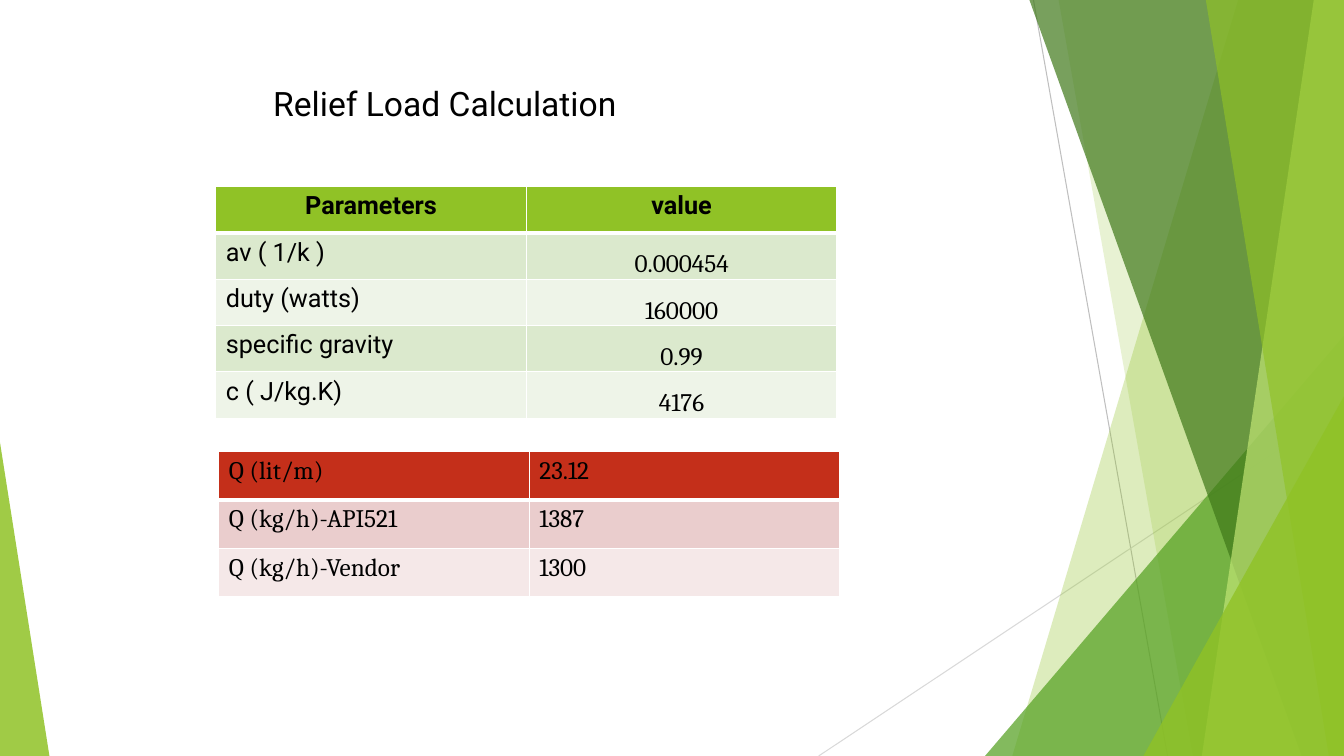
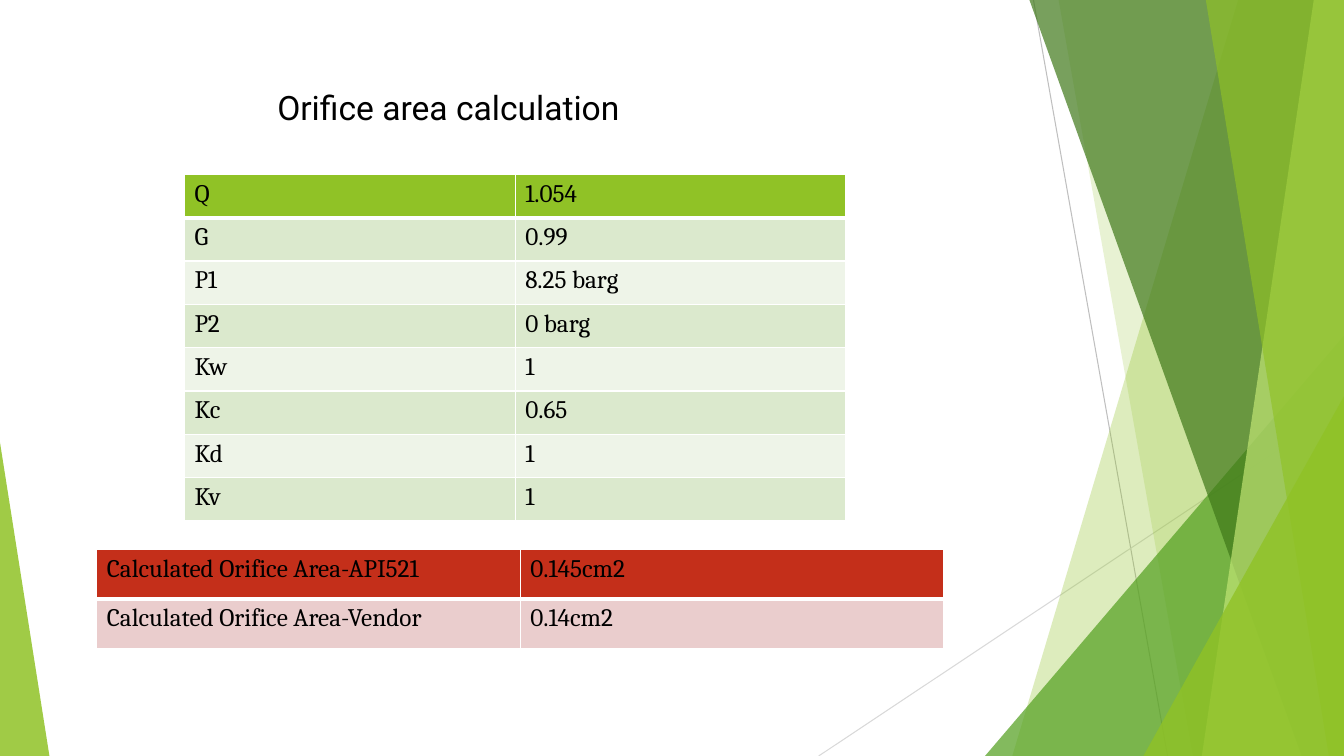
import pptx
import pptx.util
import pptx.dml.color
import pptx.enum.shapes
import pptx.enum.text
import pptx.oxml
import pptx.oxml.ns
from lxml import etree

Inches, Pt = pptx.util.Inches, pptx.util.Pt
qn = pptx.oxml.ns.qn
PP_ALIGN = pptx.enum.text.PP_ALIGN
ANCHOR = pptx.enum.text.MSO_ANCHOR

W, H = 13.33, 7.5
SANS, SERIF = "Roboto", "Cambria"
COLORS = {
    "black": "000000", "white": "FFFFFF",
    "lime": "90C226", "green": "54A021", "forest": "3F7819", "pale": "C0E474",
    "gray": "BFBFBF", "light gray": "D9D9D9",
}
# Header fill, then the two alternating body fills
SCHEMES = {
    "green": ("90C226", "DBE9CD", "EEF4E8"),
    "red": ("C42F1A", "EACDCD", "F5E8E8"),
}

# Thin lines: start, end, colour
LINES = [
    ((10.25, 0), (11.58, H), "gray"),
    ((W, 4.03), (8.12, H), "light gray"),
]
# Facets from back to front. A band runs to the right edge and gives its
# left x at the top and bottom; a triangle gives left, top, width and apex.
FACETS = [
    ("band", (12.28, 10.04), "lime", 30),
    ("band", (10.5, 11.83), "lime", 20),
    ("triangle", (9.77, 3.33, 3.56, 1), "green", 72),
    ("band", (10.21, 12.91), "forest", 70),
    ("band", (13.03, 11.92), "pale", 70),
    ("band", (11.96, 13.18), "lime", 65),
    ("triangle", (11.34, 3.93, 1.99, 1), "lime", 80),
    ("triangle", (0, 4.39, 0.49, 0), "lime", 85),
]

SLIDES = [
    {
        "title": "Relief Load Calculation", "title_at": (2.61, 0.77),
        "tables": [
            {"at": (2.14, 1.85), "col": 3.08, "row": 0.46, "scheme": "green",
             "parameters": True,
             "rows": [("Parameters", "value"), ("av ( 1/k )", "0.000454"),
                      ("duty (watts)", "160000"), ("specific gravity", "0.99"),
                      ("c ( J/kg.K)", "4176")]},
            {"at": (2.17, 4.48), "col": 3.08, "row": 0.48, "scheme": "red",
             "rows": [("Q (lit/m)", "23.12"), ("Q (kg/h)-API521", "1387"),
                      ("Q (kg/h)-Vendor", "1300")]},
        ],
    },
    {
        "title": "Orifice area calculation", "title_at": (2.65, 0.81),
        "tables": [
            {"at": (1.83, 1.73), "col": 3.28, "row": 0.43, "scheme": "green",
             "rows": [("Q", "1.054"), ("G", "0.99"), ("P1", "8.25 barg"),
                      ("P2", "0 barg"), ("Kw", "1"), ("Kc", "0.65"),
                      ("Kd", "1"), ("Kv", "1")]},
            {"at": (0.96, 5.45), "col": 4.2, "row": 0.49, "scheme": "red",
             "rows": [("Calculated Orifice Area-API521", "0.145cm2"),
                      ("Calculated Orifice Area-Vendor", "0.14cm2")]},
        ],
    },
]


def rgb(value):
    return pptx.dml.color.RGBColor.from_string(value)


def write(tf, text, font=SERIF, size=18, color="black", bold=False,
          align=PP_ALIGN.LEFT):
    p = tf.paragraphs[0]
    p.alignment = align
    r = p.add_run()
    r.text = text
    r.font.name, r.font.size, r.font.bold = font, Pt(size), bold
    r.font.color.rgb = rgb(COLORS[color])


def add_line(shapes, start, end, color):
    x1, y1, x2, y2 = (Inches(v) for v in start + end)
    line = shapes.add_connector(
        pptx.enum.shapes.MSO_CONNECTOR.STRAIGHT, x1, y1, x2, y2)
    line.line.color.rgb = rgb(COLORS[color])
    line.line.width = Pt(0.75)
    etree.SubElement(line.element.spPr, qn("a:effectLst"))


def add_facet(shapes, kind, geometry, color, opacity):
    if kind == "band":
        top_x, bottom_x = geometry
        corners = [(Inches(x), Inches(y)) for x, y in
                   ((top_x, 0), (W, 0), (W, H), (bottom_x, H))]
        outline = shapes.build_freeform(*corners[0])
        outline.add_line_segments(corners[1:], close=True)
        sp = outline.convert_to_shape()
    else:
        left, top, width, apex = geometry
        sp = shapes.add_shape(
            pptx.enum.shapes.MSO_SHAPE.ISOSCELES_TRIANGLE,
            Inches(left), Inches(top), Inches(width), Inches(H - top))
        sp.adjustments[0] = apex
    sp.shadow.inherit = False
    sp.line.fill.background()
    sp.fill.solid()
    sp.fill.fore_color.rgb = rgb(COLORS[color])
    for clr in sp.element.spPr.iter(qn("a:srgbClr")):
        etree.SubElement(clr, qn("a:alpha")).set("val", str(opacity * 1000))


def decorate(layout, s):
    """Draw the facets as a group on s, then move the group to the layout."""
    group = s.shapes.add_group_shape()
    for line in LINES:
        add_line(group.shapes, *line)
    for facet in FACETS:
        add_facet(group.shapes, *facet)
    for number, props in enumerate(group.element.iter(qn("p:cNvPr")), 100):
        props.set("id", str(number))
    layout.shapes.element.append(group.element)


def set_borders(cell, top, bottom):
    tcPr = cell._tc.get_or_add_tcPr()
    sides = (("L", 1), ("R", 1), ("T", top), ("B", bottom))
    for i, (side, width) in enumerate(sides):
        ln = pptx.oxml.parse_xml(
            f'<a:ln{side} {pptx.oxml.ns.nsdecls("a")} w="{Pt(width)}">'
            f'<a:solidFill><a:srgbClr val="{COLORS["white"]}"/></a:solidFill>'
            f'</a:ln{side}>')
        tcPr.insert(i, ln)


def format_cell(cell, text, row, column, scheme, parameters):
    """Fill one cell; a parameter table has a bold header and centred values."""
    set_borders(cell, top=3 if row == 1 else 1, bottom=3 if row == 0 else 1)
    header, odd, even = SCHEMES[scheme]
    cell.fill.solid()
    cell.fill.fore_color.rgb = rgb(
        header if row == 0 else odd if row % 2 else even)
    is_header = parameters and row == 0
    is_value = parameters and row > 0 and column == 1
    if is_value:
        cell.vertical_anchor = ANCHOR.BOTTOM
        cell.margin_left = cell.margin_right = cell.margin_top = Inches(0.01)
        cell.margin_bottom = 0
    write(cell.text_frame, text, bold=is_header,
          font=SANS if parameters and not is_value else SERIF,
          align=PP_ALIGN.CENTER if is_header or is_value else PP_ALIGN.LEFT)


def add_data_table(s, at, col, row, scheme, rows, parameters=False):
    left, top = at
    n_rows, n_cols = len(rows), len(rows[0])
    table = s.shapes.add_table(
        n_rows, n_cols, Inches(left), Inches(top),
        Inches(col * n_cols), Inches(row * n_rows)).table
    for column in table.columns:
        column.width = Inches(col)
    for i, texts in enumerate(rows):
        table.rows[i].height = Inches(row)
        for j, text in enumerate(texts):
            format_cell(table.cell(i, j), text, i, j, scheme, parameters)


def set_title(s, text, at):
    title = s.shapes.title
    title.left, title.top = (Inches(v) for v in at)
    title.width, title.height = Inches(6), Inches(0.5)
    tf = title.text_frame
    tf.word_wrap = True
    tf.vertical_anchor = ANCHOR.MIDDLE
    write(tf, text, font=SANS, size=24)


def main():
    prs = pptx.Presentation()
    prs.slide_width, prs.slide_height = Inches(W), Inches(H)
    layout = prs.slide_layouts.get_by_name("Title Only")
    for i, content in enumerate(SLIDES):
        s = prs.slides.add_slide(layout)
        if i == 0:
            decorate(layout, s)
        set_title(s, content["title"], content["title_at"])
        for table in content["tables"]:
            add_data_table(s, **table)
    prs.save("out.pptx")


if __name__ == "__main__":
    main()
